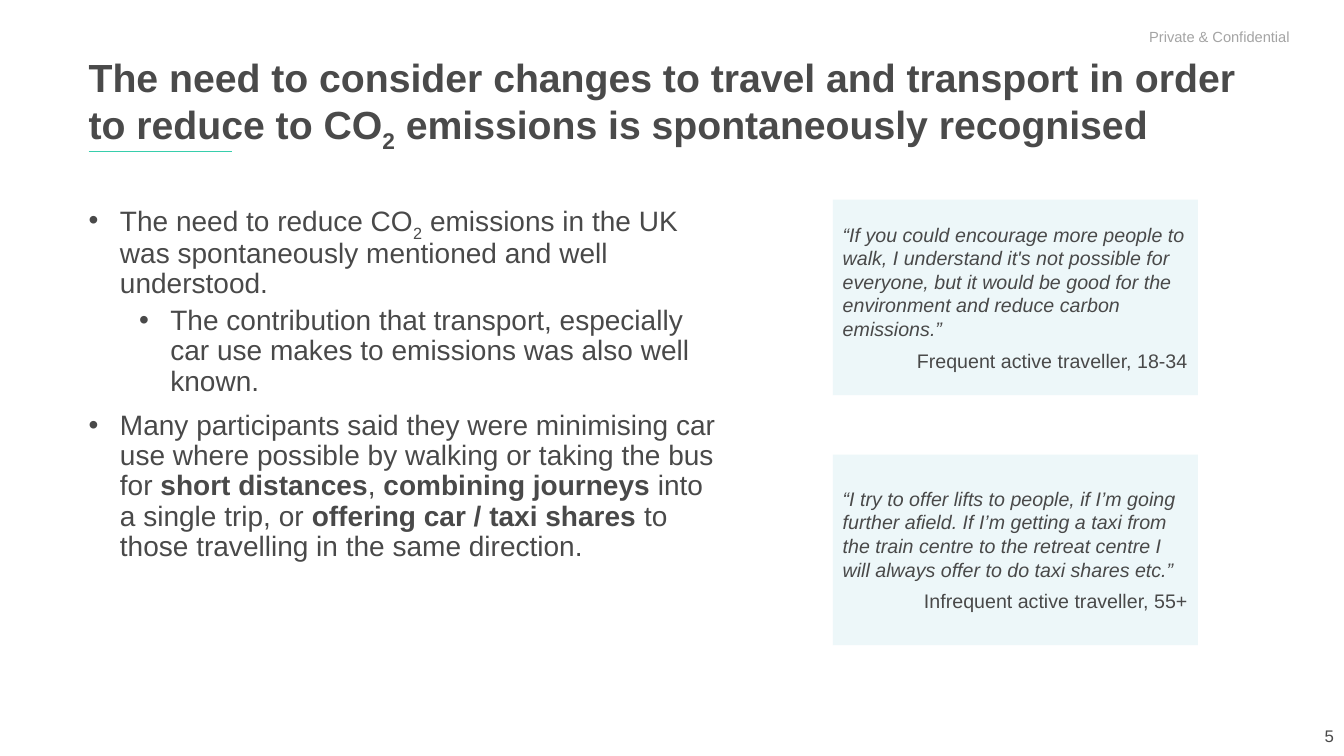
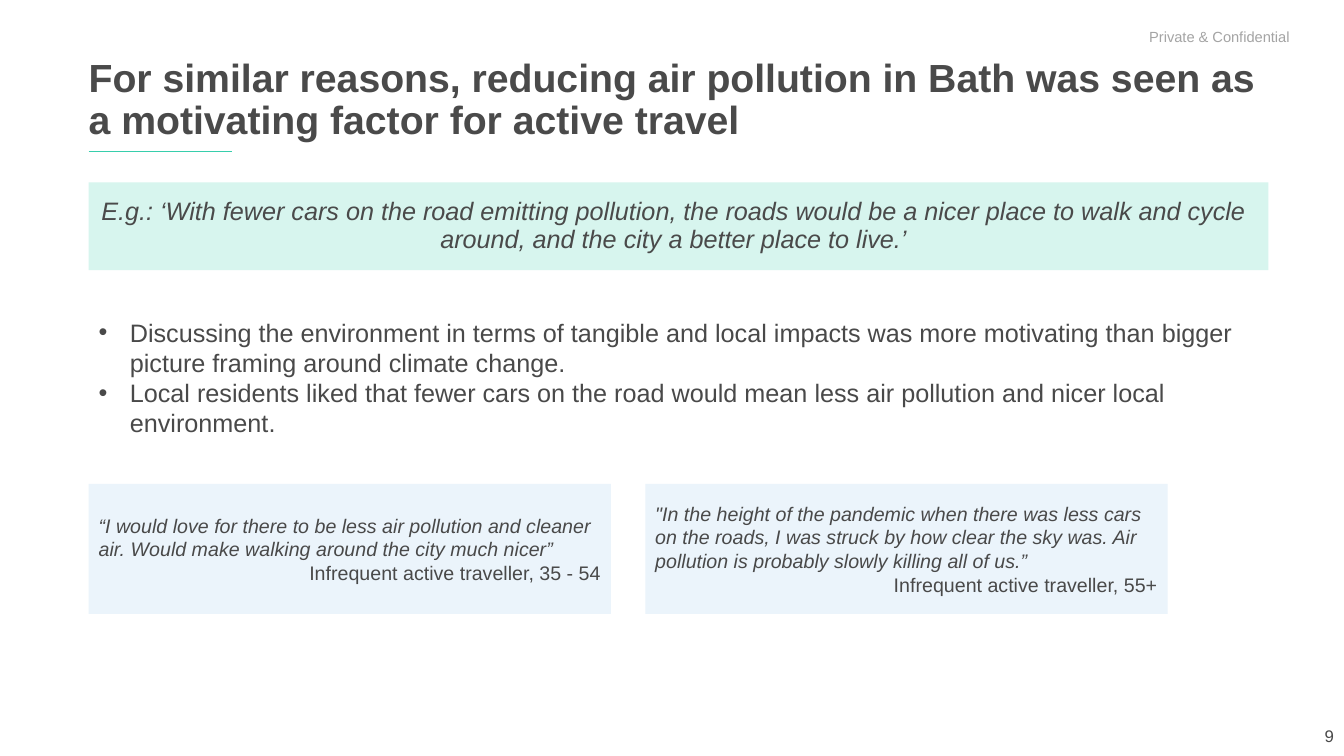
"""Build two slides on attitudes to travel, emissions and air pollution."""
from lxml import etree
from pptx import Presentation
from pptx.dml.color import RGBColor
from pptx.enum.shapes import MSO_CONNECTOR, MSO_SHAPE
from pptx.enum.text import MSO_ANCHOR, PP_ALIGN
from pptx.oxml.ns import qn
from pptx.util import Inches, Pt

RECTANGLE = MSO_SHAPE.RECTANGLE
STRAIGHT = MSO_CONNECTOR.STRAIGHT
TOP, MIDDLE = MSO_ANCHOR.TOP, MSO_ANCHOR.MIDDLE
LEFT, CENTER, RIGHT = PP_ALIGN.LEFT, PP_ALIGN.CENTER, PP_ALIGN.RIGHT

WHITE = RGBColor(0xFF, 0xFF, 0xFF)
TITLE_GREY = RGBColor(0x4A, 0x4A, 0x4A)
TEXT_GREY = RGBColor(0x49, 0x49, 0x49)
LABEL_GREY = RGBColor(0xA4, 0xA4, 0xA4)
GREEN = RGBColor(0x37, 0xCE, 0xAC)
PALE_GREEN = RGBColor(0xD7, 0xF5, 0xEE)
PALE_TEAL = RGBColor(0xED, 0xF7, 0xF9)
PALE_BLUE = RGBColor(0xEB, 0xF4, 0xFB)

FONT = "Arial"
MARGIN = 0.88
CONTENT_WIDTH = 11.7
INSET = 0.1
HANGING = 0.31
BOLD = {"bold": True}
ITALIC = {"italic": True}
SUBSCRIPT = {"baseline": "-25000"}


class Deck:
    """Hold the shared style and the current slide."""

    def __init__(self):
        """Start a widescreen presentation."""
        self.presentation = Presentation()
        self.presentation.slide_width = Inches(13.33)
        self.presentation.slide_height = Inches(7.5)
        self.slide = None

    def add_slide(self, number, title):
        """Add a slide with its number, label, rule and title."""
        self.slide = self.presentation.slides.add_slide(self.presentation.slide_layouts[6])
        self.text_box((10.33, 7.1, 3, 0.4), [self.entry(str(number), alignment=RIGHT)],
                      12, TITLE_GREY, anchor=MIDDLE)
        self.panel((11.3, 0.19, 1.63, 0.35), WHITE,
                   [self.entry("Private & Confidential")], 10.5, LABEL_GREY)
        self.rule(MARGIN, 1.5, 1.42)
        self.text_box((MARGIN, 0.53, CONTENT_WIDTH, 0.87), [self.entry(title, line_spacing=0.9)],
                      28, TITLE_GREY, inset=0, base=BOLD)

    @staticmethod
    def entry(content, bullet_indent=None, **formats):
        """Describe one paragraph by its runs and its format."""
        runs = [(content, {})] if isinstance(content, str) else content
        return runs, bullet_indent, formats

    def fill_text(self, shape, entries, size, color, anchor=TOP, inset=INSET, base=None):
        """Write paragraphs into the text frame of a shape."""
        frame = shape.text_frame
        settings = {"word_wrap": True, "vertical_anchor": anchor, "margin_left": Inches(inset),
                    "margin_right": Inches(INSET), "margin_top": Inches(0.05),
                    "margin_bottom": Inches(0.05)}
        for name, value in settings.items():
            setattr(frame, name, value)
        for index, (runs, bullet_indent, formats) in enumerate(entries):
            paragraph = frame.add_paragraph() if index else frame.paragraphs[0]
            if bullet_indent is not None:
                self.bullet(paragraph, bullet_indent)
            for name, value in {"alignment": LEFT, **formats}.items():
                setattr(paragraph, name, value)
            for text, style in runs:
                self.add_run(paragraph, text, {"size": Pt(size), "name": FONT,
                                               **(base or {}), **style}, color)

    @staticmethod
    def add_run(paragraph, text, style, color):
        """Add a run with its font style."""
        run = paragraph.add_run()
        run.text = text
        run.font.color.rgb = color
        for name, value in style.items():
            if name == "baseline":
                run.font._element.set(name, value)
            else:
                setattr(run.font, name, value)

    @staticmethod
    def bullet(paragraph, indent):
        """Give a paragraph a bullet with a hanging indent."""
        properties = paragraph._p.get_or_add_pPr()
        properties.set("marL", str(Inches(indent)))
        properties.set("indent", str(-Inches(HANGING)))
        etree.SubElement(properties, qn("a:buFont")).set("typeface", FONT)
        etree.SubElement(properties, qn("a:buChar")).set("char", "•")

    def text_box(self, place, entries, size, color, **options):
        """Add a plain text box."""
        shape = self.slide.shapes.add_textbox(*map(Inches, place))
        self.fill_text(shape, entries, size, color, **options)

    def panel(self, place, fill, entries, size, color, **options):
        """Add a filled rectangle with vertically centred text."""
        shape = self.slide.shapes.add_shape(RECTANGLE, *map(Inches, place))
        shape.shadow.inherit = False
        shape.fill.solid()
        shape.fill.fore_color.rgb = fill
        shape.line.fill.background()
        self.fill_text(shape, entries, size, color, anchor=MIDDLE, **options)

    def quote(self, place, fill, words, speaker, gap=0):
        """Add a quotation panel with its speaker."""
        self.panel(place, fill, [self.entry([(words, ITALIC)], space_after=Pt(gap)),
                                 self.entry(speaker, alignment=RIGHT, space_after=Pt(gap))],
                   14, TEXT_GREY)

    def rule(self, left, top, width):
        """Add the green rule below the title."""
        connector = self.slide.shapes.add_connector(
            STRAIGHT, *map(Inches, (left, top, left + width, top)))
        connector.line.color.rgb = GREEN
        connector.line.width = Pt(1)
        etree.SubElement(connector._element.spPr, qn("a:effectLst"))


def emissions_slide(deck):
    """Build the slide on carbon emissions."""
    deck.add_slide(5, [
        ("The need to consider changes to travel and transport in order to reduce to CO", {}),
        ("2", SUBSCRIPT), (" emissions is spontaneously recognised", {})])
    deck.text_box((MARGIN, 1.98, 6.41, 4.8), [
        deck.entry([("The need to reduce CO", {}), ("2", SUBSCRIPT),
                    (" emissions in the UK was spontaneously mentioned and well understood.", {})],
                   HANGING, line_spacing=0.9),
        deck.entry("The contribution that transport, especially car use makes to emissions "
                   "was also well known.",
                   HANGING + 0.5, level=1, line_spacing=0.9, space_before=Pt(5)),
        deck.entry([("Many participants said they were minimising car use where possible by "
                     "walking or taking the bus for ", {}),
                    ("short distances", BOLD), (", ", {}), ("combining journeys ", BOLD),
                    ("into a single trip, or ", {}), ("offering car / taxi shares ", BOLD),
                    ("to those travelling in the same direction.", {})],
                   HANGING, line_spacing=0.9, space_before=Pt(10)),
    ], 20, TEXT_GREY, inset=0)
    deck.quote((8.26, 1.98, 3.62, 1.94), PALE_TEAL,
               "“If you could encourage more people to walk, I understand it's not possible for "
               "everyone, but it would be good for the environment and reduce carbon emissions.”",
               "Frequent active traveller, 18-34", gap=6)
    deck.quote((8.26, 4.51, 3.62, 1.89), PALE_TEAL,
               "“I try to offer lifts to people, if I’m going further afield. If I’m getting a "
               "taxi from the train centre to the retreat centre I will always offer to do taxi "
               "shares etc.”",
               "Infrequent active traveller, 55+", gap=6)


def pollution_slide(deck):
    """Build the slide on air pollution."""
    deck.add_slide(9, "For similar reasons, reducing air pollution in Bath was seen as "
                      "a motivating factor for active travel")
    deck.panel((MARGIN, 1.81, CONTENT_WIDTH, 0.87), PALE_GREEN, [
        deck.entry("E.g.: ‘With fewer cars on the road emitting pollution, the roads would be a "
                   "nicer place to walk and cycle around, and the city a better place to live.’",
                   alignment=CENTER, line_spacing=0.9)],
               18, TITLE_GREY, inset=0, base=ITALIC)
    findings = [
        "Discussing the environment in terms of tangible and local impacts was more motivating "
        "than bigger picture framing around climate change.",
        "Local residents liked that fewer cars on the road would mean less air pollution and "
        "nicer local environment."]
    deck.text_box((MARGIN, 2.88, CONTENT_WIDTH, 1.73),
                  [deck.entry(finding, HANGING) for finding in findings],
                  18, TEXT_GREY, anchor=MIDDLE)
    quotes = [
        ("“I would love for there to be less air pollution and cleaner air. Would make walking "
         "around the city much nicer”", "Infrequent active traveller, 35 - 54"),
        ("\"In the height of the pandemic when there was less cars on the roads, I was struck by "
         "how clear the sky was. Air pollution is probably slowly killing all of us.”",
         "Infrequent active traveller, 55+")]
    width, gap = 5.18, 0.34
    for column, (words, speaker) in enumerate(quotes):
        deck.quote((MARGIN + column * (width + gap), 4.8, width, 1.29), PALE_BLUE, words, speaker)


def main():
    """Build and save the presentation."""
    deck = Deck()
    emissions_slide(deck)
    pollution_slide(deck)
    deck.presentation.save("out.pptx")


if __name__ == "__main__":
    main()
